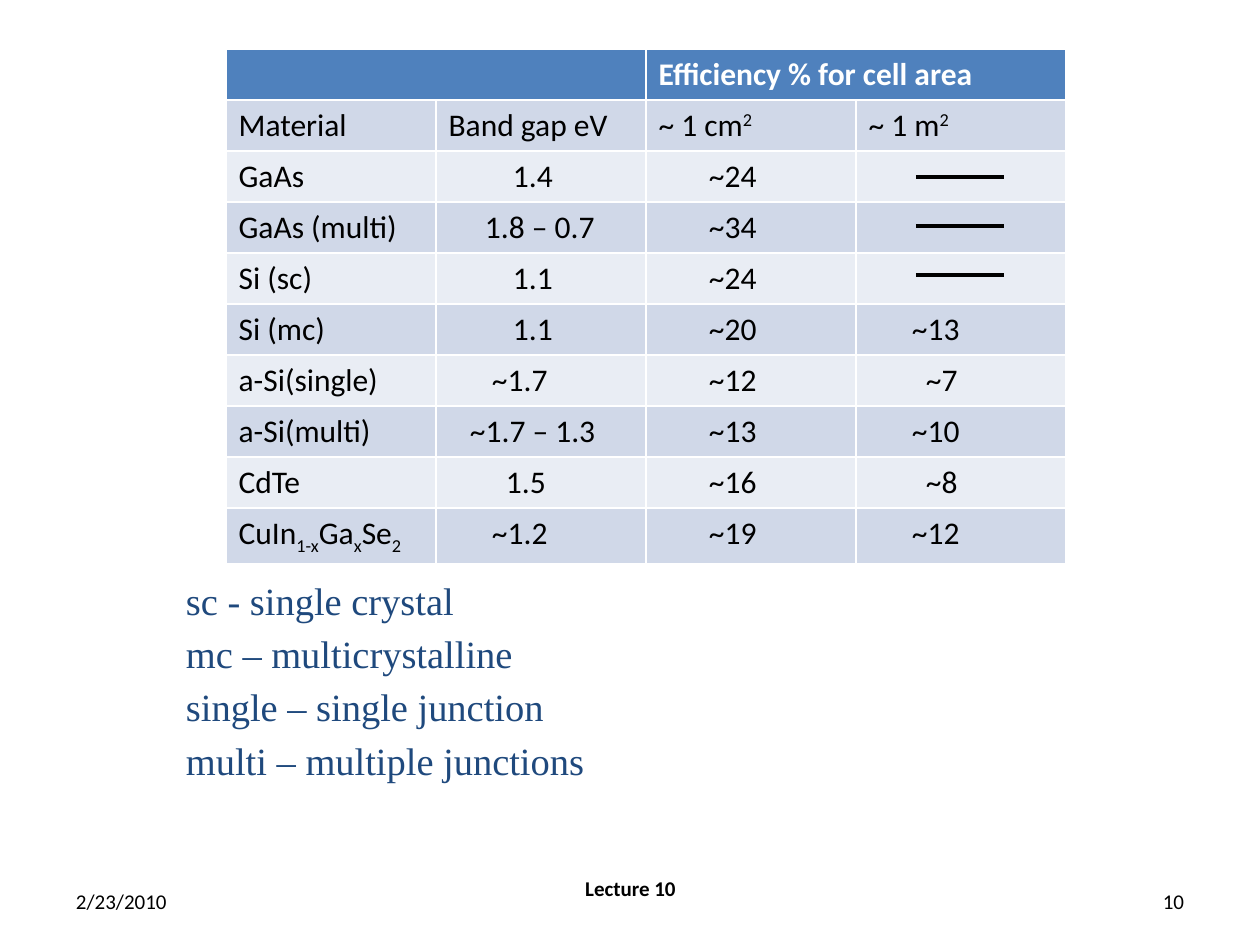
"""Build the solar cell efficiency table slide."""
import pptx
import pptx.dml.color
import pptx.enum.shapes
import pptx.enum.text
import pptx.oxml
import pptx.oxml.ns
import pptx.util

RGB = pptx.dml.color.RGBColor
WHITE = RGB(0xFF, 0xFF, 0xFF)
BLACK = RGB(0, 0, 0)
NAVY = RGB(0x1F, 0x49, 0x7D)
HEADER = RGB(0x4F, 0x81, 0xBD)
BANDS = [RGB(0xD0, 0xD8, 0xE8), RGB(0xE9, 0xED, 0xF4)]
ALIGN = pptx.enum.text.PP_ALIGN
ANCHOR = pptx.enum.text.MSO_ANCHOR

ROWS = [
    ["", "", "Efficiency % for cell area", ""],
    ["Material", "Band gap eV", "~ 1 cm|^2", "~ 1 m|^2"],
    ["GaAs", "1.4", "~24", ""],
    ["GaAs (multi)", "1.8 – 0.7", "~34", ""],
    ["Si (sc)", "1.1", "~24", ""],
    ["Si (mc)", "1.1", "~20", "~13"],
    ["a-Si(single)", "~1.7", "~12", "~7"],
    ["a-Si(multi)", "~1.7 – 1.3", "~13", "~10"],
    ["CdTe", "1.5", "~16", "~8"],
    ["CuIn|_1-x|Ga|_x|Se|_2", "~1.2", "~19", "~12"],
]
INDENTS = {"1.4": 64, "1.1": 64, "1.8 – 0.7": 36, "~1.7 – 1.3": 21,
           "1.5": 57, "~7": 57, "~8": 57}
DEFAULT_INDENT, EFFICIENCY_INDENT = 43, 50
LEGEND = ["sc - single crystal", "mc – multicrystalline",
          "single – single junction", "multi – multiple junctions"]
FOOTERS = [
    ("2/23/2010", 63, 294, ALIGN.LEFT, False, 6),
    ("Lecture 10", 431, 399, ALIGN.CENTER, True, 32),
    ("10", 903, 294, ALIGN.RIGHT, False, 6),
]
TABLE = (226, 49)
COL_W, ROW_H = 210, 51
DASH_X, DASH_Y, DASH_W, DASH_STEP = 916, 177, 88, 49
BASELINES = {"^": "30000", "_": "-25000"}


def px(n):
    return pptx.util.Emu(round(n * 914400 / 126))


def add_run(p, text, font, size, color, bold=False):
    r = p.add_run()
    r.text = text
    formats = {"name": font, "size": pptx.util.Pt(size), "bold": bold}
    for key, value in formats.items():
        setattr(r.font, key, value)
    r.font.color.rgb = color
    return r


def add_box(s, box, margins, anchor):
    sp = s.shapes.add_textbox(*map(px, box))
    tf = sp.text_frame
    tf.word_wrap = True
    tf.vertical_anchor = anchor
    for side, value in zip(("left", "top", "right", "bottom"), margins):
        setattr(tf, "margin_" + side, px(value))
    return sp


def add_legend(s):
    sp = add_box(s, (0, 29, 1197, 824), (186, 6, 12, 70), ANCHOR.BOTTOM)
    sp.fill.solid()
    sp.fill.fore_color.rgb = WHITE
    tf = sp.text_frame
    for i, line in enumerate(LEGEND):
        p = tf.add_paragraph() if i else tf.paragraphs[0]
        p.space_before = pptx.util.Pt(4.15 if i else 0)
        add_run(p, line, "Times New Roman", 22, NAVY)


def add_footers(s):
    for text, x, w, align, bold, bottom in FOOTERS:
        sp = add_box(s, (x, 876, w, 50), (13, 6, 13, bottom), ANCHOR.MIDDLE)
        p = sp.text_frame.paragraphs[0]
        p.alignment = align
        add_run(p, text, "Calibri", 12, BLACK, bold)


def add_efficiency_table(s):
    n_rows, n_cols = len(ROWS), len(ROWS[0])
    size = (n_cols * COL_W, n_rows * ROW_H)
    table = s.shapes.add_table(n_rows, n_cols, *map(px, TABLE + size)).table
    for col in table.columns:
        col.width = px(COL_W)
    for i, texts in enumerate(ROWS):
        table.rows[i].height = px(ROW_H)
        for j, text in enumerate(texts):
            cell = table.cell(i, j)
            cell.fill.solid()
            cell.fill.fore_color.rgb = BANDS[(i - 1) % 2] if i else HEADER
            if i > 1 and j:
                indent = EFFICIENCY_INDENT if j == 2 else INDENTS.get(text, DEFAULT_INDENT)
                cell.margin_left = px(13 + indent)
            p = cell.text_frame.paragraphs[0]
            for part in filter(None, text.split("|")):
                r = add_run(p, part.lstrip("^_"), "Calibri", 18,
                            BLACK if i else WHITE, i == 0)
                if part[0] in BASELINES:
                    r.font._element.set("baseline", BASELINES[part[0]])
    for j in (0, 2):
        table.cell(0, j).merge(table.cell(0, j + 1))


def add_dashes(s):
    for i in range(3):
        y = px(DASH_Y + i * DASH_STEP)
        line = s.shapes.add_connector(pptx.enum.shapes.MSO_CONNECTOR.STRAIGHT,
                                      px(DASH_X), y, px(DASH_X + DASH_W), y)
        line.line.color.rgb = BLACK
        line.line.width = pptx.util.Pt(2.25)
        line._element.spPr.append(pptx.oxml.parse_xml(
            f'<a:effectLst {pptx.oxml.ns.nsdecls("a")}/>'))


def main():
    prs = pptx.Presentation()
    prs.slide_width, prs.slide_height = px(1260), px(945)
    s = prs.slides.add_slide(prs.slide_layouts[6])
    add_legend(s)
    add_footers(s)
    add_efficiency_table(s)
    add_dashes(s)
    prs.save("out.pptx")


if __name__ == "__main__":
    main()
